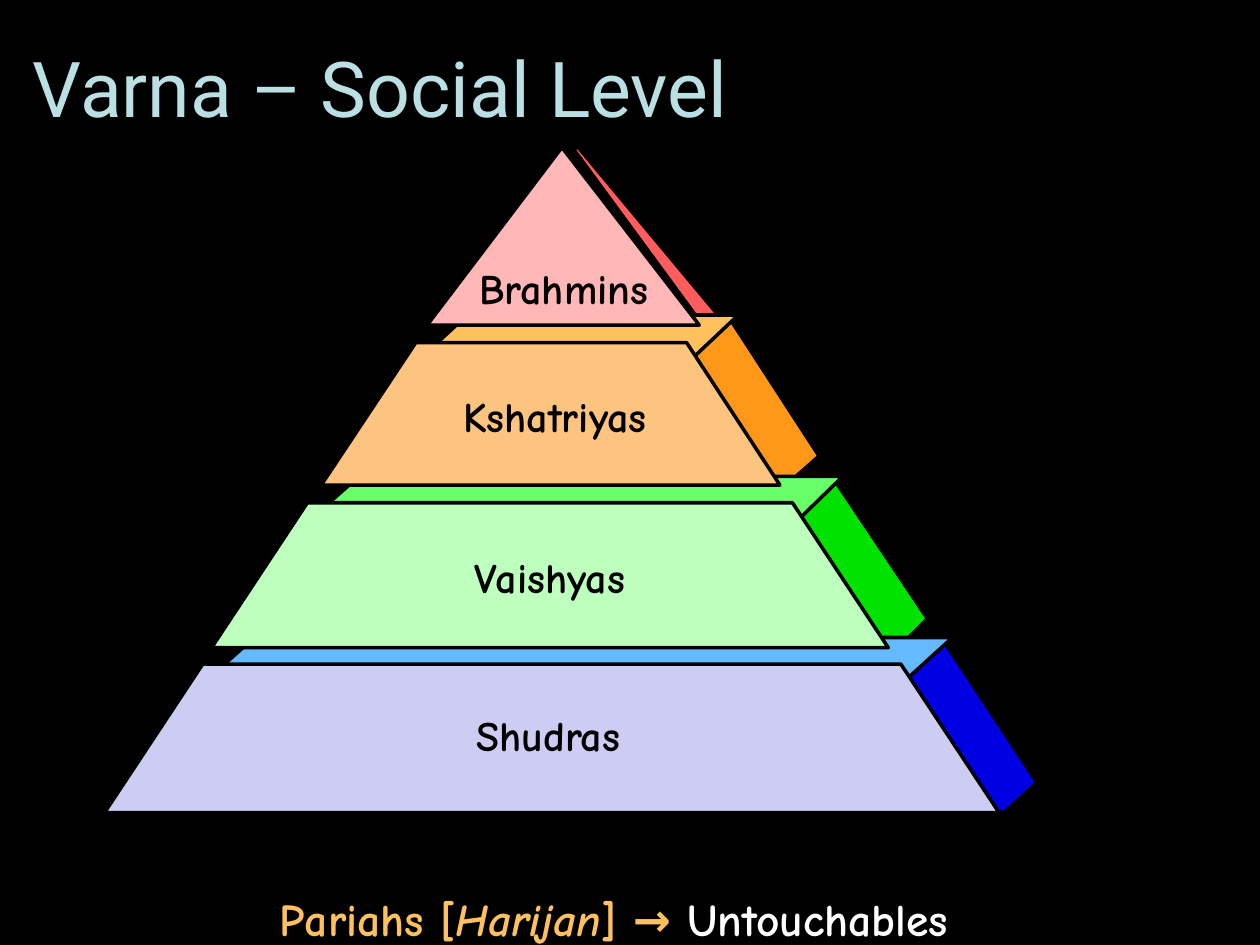
from dataclasses import dataclass

from pptx import Presentation
from pptx.dml.color import RGBColor
from pptx.enum.text import MSO_ANCHOR, MSO_AUTO_SIZE, PP_ALIGN
from pptx.util import Pt

PX = 9144  # EMU per px, 100 px to the inch


@dataclass(frozen=True)
class Theme:
    background: str = "000000"
    ink: str = "000000"
    title: str = "BBE0E3"
    accent: str = "FFC15D"
    light: str = "FFFFFF"
    title_font: str = "Roboto"
    body_font: str = "Comic Neue"
    title_size: int = 44
    label_size: int = 24
    caption_size: int = 26
    outline: int = 2


THEME = Theme()
TITLE = "Varna – Social Level"
TITLE_BOX = (16, 6, 971, 125)

# From the base up; each face is (fill, corner points)
LEVELS = [
    {
        "label": ("Shudras", (189, 563, 492, 40)),
        "side": ("0000E2", [(797, 645), (823, 621), (746, 504), (192, 504)]),
        "top": ("65B9FF", [(175, 530), (701, 556), (756, 506), (202, 506)]),
        "front": ("CDCDF3", [(83, 645), (793, 645), (715, 527), (161, 527)]),
    },
    {
        "label": ("Vaishyas", (250, 438, 373, 40)),
        "side": ("00E200", [(712, 515), (736, 491), (659, 376), (274, 376)]),
        "top": ("69FF69", [(259, 401), (582, 463), (669, 378), (285, 378)]),
        "front": ("BDFFBD", [(168, 514), (705, 514), (629, 399), (244, 399)]),
    },
    {
        "label": ("Kshatriyas", (324, 310, 233, 40)),
        "side": ("FF9719", [(624, 385), (650, 362), (576, 248), (361, 248)]),
        "top": ("FFC15D", [(346, 273), (532, 301), (586, 250), (371, 250)]),
        "front": ("FDC47F", [(255, 385), (619, 385), (545, 272), (330, 272)]),
    },
    {
        "label": ("Brahmins", (331, 208, 233, 40)),
        "side": ("FF5D5D", [(569, 249), (459, 117), (455, 118),
                            (557, 257), (566, 251)]),
        "front": ("FFB7B7", [(339, 258), (555, 258), (446, 117)]),
    },
]

CAPTION_BOX = (150, 707, 675, 43)
CAPTION = [  # text, colour, italic
    ("Pariahs [", THEME.accent, False),
    ("Harijan", THEME.accent, True),
    ("] → ", THEME.accent, False),
    ("Untouchables", THEME.light, False),
]


def emu(lengths):
    return [length * PX for length in lengths]


def rgb(value):
    return RGBColor.from_string(value)


def add_run(paragraph, text, color, **font):
    run = paragraph.add_run()
    run.text = text
    run.font.color.rgb = rgb(color)
    for attribute, value in font.items():
        setattr(run.font, attribute, value)


def add_face(slide, fill, corners):
    outline = slide.shapes.build_freeform(*corners[0], scale=PX)
    outline.add_line_segments(corners[1:], close=True)
    face = outline.convert_to_shape()
    face.shadow.inherit = False
    face.fill.solid()
    face.fill.fore_color.rgb = rgb(fill)
    face.line.color.rgb = rgb(THEME.ink)
    face.line.width = Pt(THEME.outline)


def add_centred_text(slide, box, runs, size, anchor):
    frame = slide.shapes.add_textbox(*emu(box)).text_frame
    settings = {
        "word_wrap": True, "vertical_anchor": anchor,
        "auto_size": MSO_AUTO_SIZE.SHAPE_TO_FIT_TEXT,
        "margin_left": 0, "margin_top": 0,
        "margin_right": 0, "margin_bottom": 0,
    }
    for attribute, value in settings.items():
        setattr(frame, attribute, value)
    paragraph = frame.paragraphs[0]
    paragraph.alignment = PP_ALIGN.CENTER
    for text, color, italic in runs:
        add_run(paragraph, text, color, name=THEME.body_font,
                size=Pt(size), bold=True, italic=italic)


def set_title(slide):
    title = slide.shapes.title
    title.left, title.top, title.width, title.height = emu(TITLE_BOX)
    frame = title.text_frame
    frame.auto_size = MSO_AUTO_SIZE.NONE
    frame.vertical_anchor = MSO_ANCHOR.MIDDLE
    paragraph = frame.paragraphs[0]
    paragraph.alignment = PP_ALIGN.LEFT
    add_run(paragraph, TITLE, THEME.title, name=THEME.title_font,
            size=Pt(THEME.title_size))


def main():
    deck = Presentation()
    deck.slide_width, deck.slide_height = emu((1000, 750))
    slide = deck.slides.add_slide(deck.slide_layouts[5])
    slide.background.fill.solid()
    slide.background.fill.fore_color.rgb = rgb(THEME.background)

    set_title(slide)
    for face in ("side", "top", "front"):
        for level in LEVELS:
            if face in level:
                add_face(slide, *level[face])
    for level in LEVELS:
        name, box = level["label"]
        add_centred_text(slide, box, [(name, THEME.ink, False)],
                         THEME.label_size, MSO_ANCHOR.MIDDLE)
    add_centred_text(slide, CAPTION_BOX, CAPTION, THEME.caption_size,
                     MSO_ANCHOR.TOP)
    deck.save("out.pptx")


if __name__ == "__main__":
    main()
